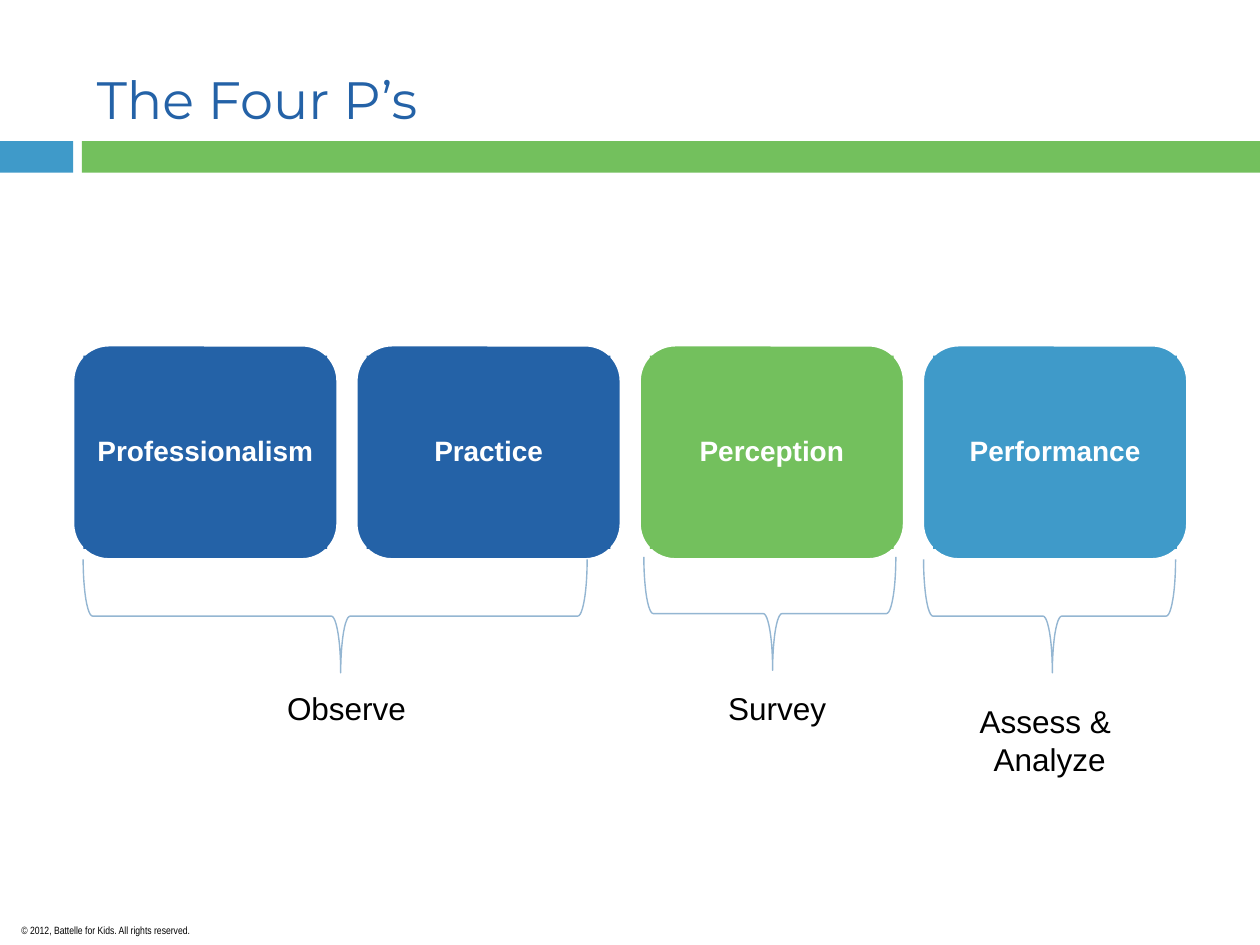
from pptx import Presentation
from pptx.dml.color import RGBColor
from pptx.enum.shapes import MSO_SHAPE as Shape
from pptx.enum.text import MSO_ANCHOR as Anchor, PP_ALIGN as Align
from pptx.util import Inches, Pt
from dataclasses import dataclass


@dataclass(frozen=True)
class Theme:
    navy: str = "2462A7"
    green: str = "73C05D"
    sky: str = "3F9AC9"
    brace: str = "94B6D2"
    white: str = "FFFFFF"
    black: str = "000000"
    body: str = "Arial"
    heading: str = "Montserrat"
    narrow: str = "Arial Narrow"
    title_size: float = 30
    label_size: float = 18
    card_size: float = 16
    footer_size: float = 6


THEME = Theme()
WIDTH, HEIGHT = 10, 7.5

TITLE = "The Four P’s"
FOOTER = "© 2012, Battelle for Kids. All rights reserved."
BANDS = [(0, 0.58, THEME.sky), (0.65, WIDTH - 0.65, THEME.green)]
CARDS = [
    ("Professionalism", THEME.navy),
    ("Practice", THEME.navy),
    ("Perception", THEME.green),
    ("Performance", THEME.sky),
]
# Brace left, top and length; label lines and label box
METHODS = [
    ((0.66, 4.44, 4), ["Observe"], (2.18, 5.42, 1.16, 0.4)),
    ((5.11, 4.42, 2), ["Survey"], (5.68, 5.42, 0.99, 0.4)),
    ((7.33, 4.44, 2), ["Assess & ", "Analyze"], (7.67, 5.52, 1.32, 0.71)),
]

BAND_TOP, BAND_HEIGHT = 1.12, 0.25
CARD_LEFT, CARD_TOP, CARD_WIDTH, CARD_HEIGHT = 0.58, 2.74, 2.1, 1.7
CARD_PITCH, CARD_INSET = 2.248, 0.083
BRACE_DEPTH = 0.9


def color(code):
    return RGBColor.from_string(code)


def add_block(shapes, kind, area, fill=None, line=None, line_width=1.5):
    block = shapes.add_shape(kind, *map(Inches, area))
    block.shadow.inherit = False
    if fill:
        block.fill.solid()
        block.fill.fore_color.rgb = color(fill)
    else:
        block.fill.background()
    if line:
        block.line.color.rgb = color(line)
        block.line.width = Pt(line_width)
    else:
        block.line.fill.background()
    return block


def write(frame, lines, size, ink, font=THEME.body, bold=False, align=Align.LEFT):
    """Fill the frame's first paragraph, with a line break between lines."""
    para = frame.paragraphs[0]
    para.alignment = align
    for index, line in enumerate(lines):
        if index:
            para.add_line_break()
        span = para.add_run()
        span.text = line
        span.font.name, span.font.size, span.font.bold = font, Pt(size), bold
        span.font.color.rgb = color(ink)
    return para


def set_margins(frame, margin):
    frame.margin_left = frame.margin_right = Inches(margin)
    frame.margin_top = frame.margin_bottom = Inches(margin)


def add_text(page, area, lines, size, ink, wrap=False, **style):
    box = page.shapes.add_textbox(*map(Inches, area))
    box.text_frame.word_wrap = wrap
    write(box.text_frame, lines, size, ink, **style)
    return box.text_frame


def add_card(page, column, name, fill):
    left = CARD_LEFT + column * CARD_PITCH
    card = page.shapes.add_group_shape()
    add_block(card.shapes, Shape.ROUNDED_RECTANGLE,
              (left, CARD_TOP, CARD_WIDTH, CARD_HEIGHT), fill, THEME.white)
    inner = (left + CARD_INSET, CARD_TOP + CARD_INSET,
             CARD_WIDTH - 2 * CARD_INSET, CARD_HEIGHT - 2 * CARD_INSET)
    frame = add_block(card.shapes, Shape.RECTANGLE, inner, fill).text_frame
    frame.word_wrap = True
    frame.vertical_anchor = Anchor.MIDDLE
    set_margins(frame, 0.09)
    para = write(frame, [name], THEME.card_size, THEME.white,
                 bold=True, align=Align.CENTER)
    para.line_spacing = 0.9


def add_brace(page, left, top, length):
    """Turn a right brace a quarter so that it points down."""
    shift = (length - BRACE_DEPTH) / 2
    brace = add_block(page.shapes, Shape.RIGHT_BRACE,
                      (left + shift, top - shift, BRACE_DEPTH, length),
                      line=THEME.brace, line_width=0.79)
    brace.rotation = 90
    brace.adjustments[0], brace.adjustments[1] = 0.083, 0.489


def main():
    deck = Presentation()
    deck.slide_width, deck.slide_height = Inches(WIDTH), Inches(HEIGHT)
    page = deck.slides.add_slide(deck.slide_layouts[6])

    for left, width, fill in BANDS:
        add_block(page.shapes, Shape.RECTANGLE,
                  (left, BAND_TOP, width, BAND_HEIGHT), fill)
    footer = add_text(page, (0.17, 7.33, 1.67, 0.08), [FOOTER],
                      THEME.footer_size, THEME.black, font=THEME.narrow)
    set_margins(footer, 0)
    title = add_text(page, (0.67, 0.48, 8.92, 0.61), [TITLE], THEME.title_size,
                     THEME.navy, wrap=True, font=THEME.heading)
    title.vertical_anchor = Anchor.MIDDLE

    for column, (name, fill) in enumerate(CARDS):
        add_card(page, column, name, fill)
    for brace, lines, area in METHODS:
        add_brace(page, *brace)
        add_text(page, area, lines, THEME.label_size, THEME.black,
                 align=Align.CENTER if len(lines) > 1 else Align.LEFT)

    deck.save("out.pptx")


if __name__ == "__main__":
    main()
